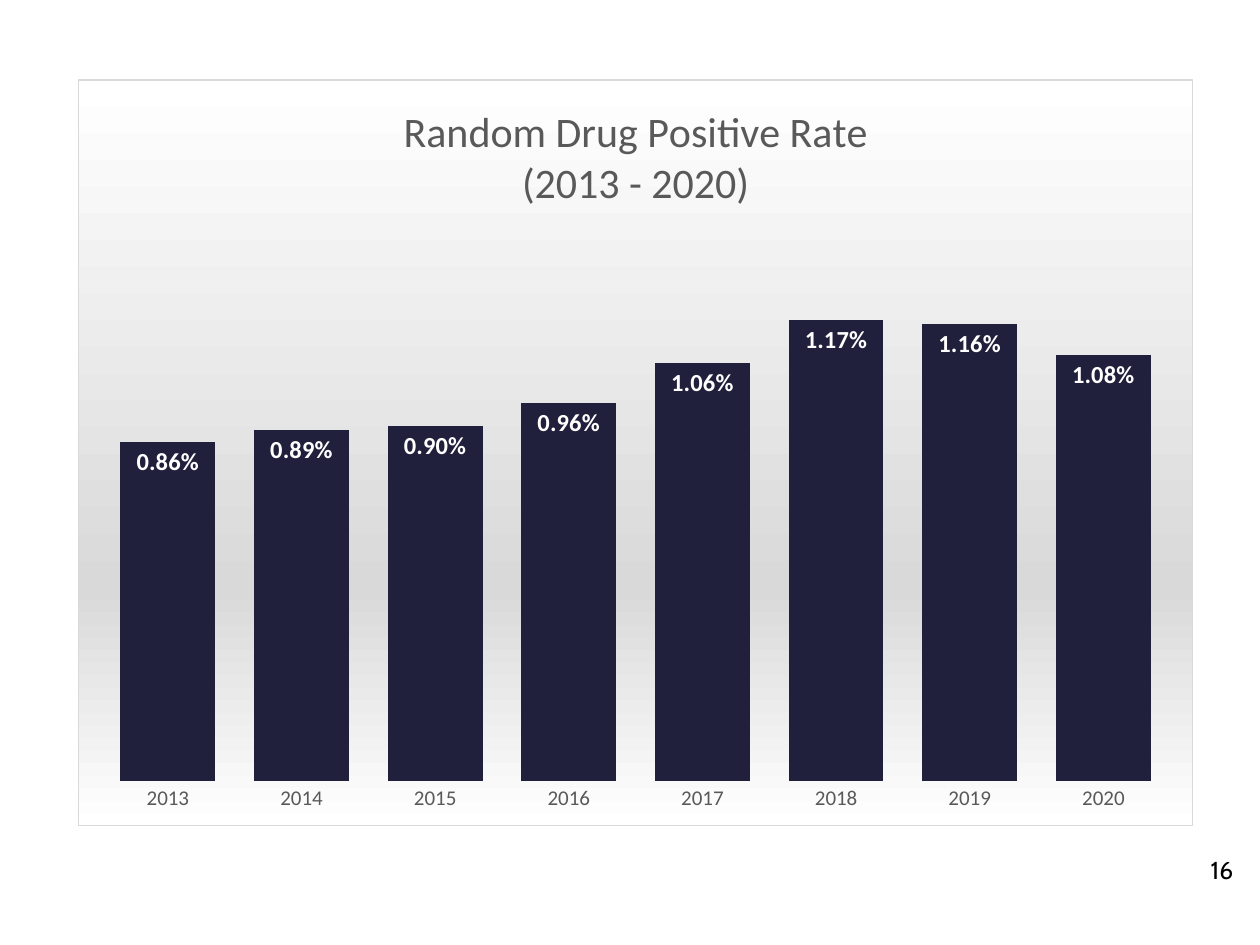
import pptx
import pptx.chart.data
import pptx.dml.color
import pptx.enum.chart
import pptx.oxml
import pptx.oxml.ns
import pptx.util
from dataclasses import dataclass
from pptx.util import Inches


@dataclass(frozen=True)
class Theme:
    bar: str = "20203C"
    gray: str = "595959"
    edge: str = "D9D9D9"
    white: str = "FFFFFF"
    black: str = "000000"
    face: str = "Calibri"
    page_face: str = "Cabin"
    title: int = 24
    label: int = 14
    axis: int = 12
    base: int = 10


THEME = Theme()
RATES = {
    "2013": 0.0086, "2014": 0.0089, "2015": 0.0090, "2016": 0.0096,
    "2017": 0.0106, "2018": 0.0117, "2019": 0.0116, "2020": 0.0108,
}
NS = pptx.oxml.ns.nsdecls("c", "a")


def set_all(item, values):
    for name, value in values.items():
        setattr(item, name, value)


def set_font(font, size, color, face=THEME.face, bold=False):
    set_all(font, {"size": pptx.util.Pt(size), "name": face, "bold": bold})
    font.color.rgb = pptx.dml.color.RGBColor.from_string(color)


def add_page(slide, text):
    box = slide.shapes.add_textbox(Inches(9.51), Inches(6.74), Inches(0.58), Inches(0.77))
    frame = box.text_frame
    set_all(frame, {"word_wrap": True, "text": text})
    set_font(frame.paragraphs[0].font, THEME.label, THEME.black, THEME.page_face)


def add_chart(slide):
    data = pptx.chart.data.CategoryChartData(number_format="0.00%")
    data.categories = list(RATES)
    data.add_series("Series 1", list(RATES.values()))
    kind = pptx.enum.chart.XL_CHART_TYPE.COLUMN_CLUSTERED
    chart = slide.shapes.add_chart(
        kind, Inches(0.62), Inches(0.63), Inches(8.85), Inches(5.93), data).chart
    chart.has_legend = False
    set_font(chart.font, THEME.base, THEME.black)
    return chart


def add_title(chart, lines):
    chart.has_title = True
    chart.chart_title.include_in_layout = False
    frame = chart.chart_title.text_frame
    frame.text = "\n".join(lines)
    for para in frame.paragraphs:
        set_font(para.font, THEME.title, THEME.gray)
        for run in para.runs:
            set_font(run.font, THEME.title, THEME.gray)


def style_axes(chart):
    none = pptx.enum.chart.XL_TICK_MARK.NONE
    years = chart.category_axis
    set_all(years, {"major_tick_mark": none, "minor_tick_mark": none,
                    "has_major_gridlines": False})
    years.format.line.fill.background()
    set_font(years.tick_labels.font, THEME.axis, THEME.gray)
    set_all(chart.value_axis, {"minimum_scale": 0, "maximum_scale": 0.014,
                               "has_major_gridlines": False, "visible": False})


def style_bars(chart):
    plot = chart.plots[0]
    set_all(plot, {"gap_width": 41, "vary_by_categories": False,
                   "has_data_labels": True})
    fill = plot.series[0].format.fill
    fill.solid()
    fill.fore_color.rgb = pptx.dml.color.RGBColor.from_string(THEME.bar)
    labels = plot.data_labels
    set_all(labels, {"show_value": True, "number_format": "0.00%",
                     "number_format_is_linked": False,
                     "position": pptx.enum.chart.XL_LABEL_POSITION.INSIDE_END})
    set_font(labels.font, THEME.label, THEME.white, bold=True)


def place_plot(chart, **box):
    """Set the inner plot area as fractions of the chart."""
    area = chart.element.find(".//" + pptx.oxml.ns.qn("c:plotArea"))
    for old in area.findall(pptx.oxml.ns.qn("c:layout")):
        area.remove(old)
    modes = "".join(f'<c:{key}Mode val="edge"/>' for key in "xy")
    sides = "".join(f'<c:{key} val="{value}"/>' for key, value in box.items())
    area.insert(0, pptx.oxml.parse_xml(
        f'<c:layout {NS}><c:manualLayout><c:layoutTarget val="inner"/>'
        f"{modes}{sides}</c:manualLayout></c:layout>"))


def fill_back(chart):
    """Give the chart area its gradient and border."""
    stops = "".join(
        f'<a:gs pos="{place * 1000}"><a:srgbClr val="{color}"/></a:gs>'
        for place, color in ((0, THEME.white), (68, THEME.edge), (100, THEME.white)))
    back = pptx.oxml.parse_xml(
        f'<c:spPr {NS}><a:gradFill><a:gsLst>{stops}</a:gsLst>'
        f'<a:lin ang="5400000" scaled="0"/></a:gradFill>'
        f'<a:ln w="{pptx.util.Pt(0.75)}"><a:solidFill>'
        f'<a:srgbClr val="{THEME.edge}"/></a:solidFill></a:ln></c:spPr>')
    chart.element.find(pptx.oxml.ns.qn("c:chart")).addnext(back)


def main():
    deck = pptx.Presentation()
    set_all(deck, {"slide_width": Inches(10), "slide_height": Inches(7.5)})
    slide = deck.slides.add_slide(deck.slide_layouts.get_by_name("Blank"))
    add_page(slide, "16")
    chart = add_chart(slide)
    add_title(chart, ["Random Drug Positive Rate", "(2013 - 2020)"])
    style_axes(chart)
    style_bars(chart)
    place_plot(chart, x=0.02, y=0.2, w=0.96, h=0.74)
    fill_back(chart)
    deck.save("out.pptx")


if __name__ == "__main__":
    main()
